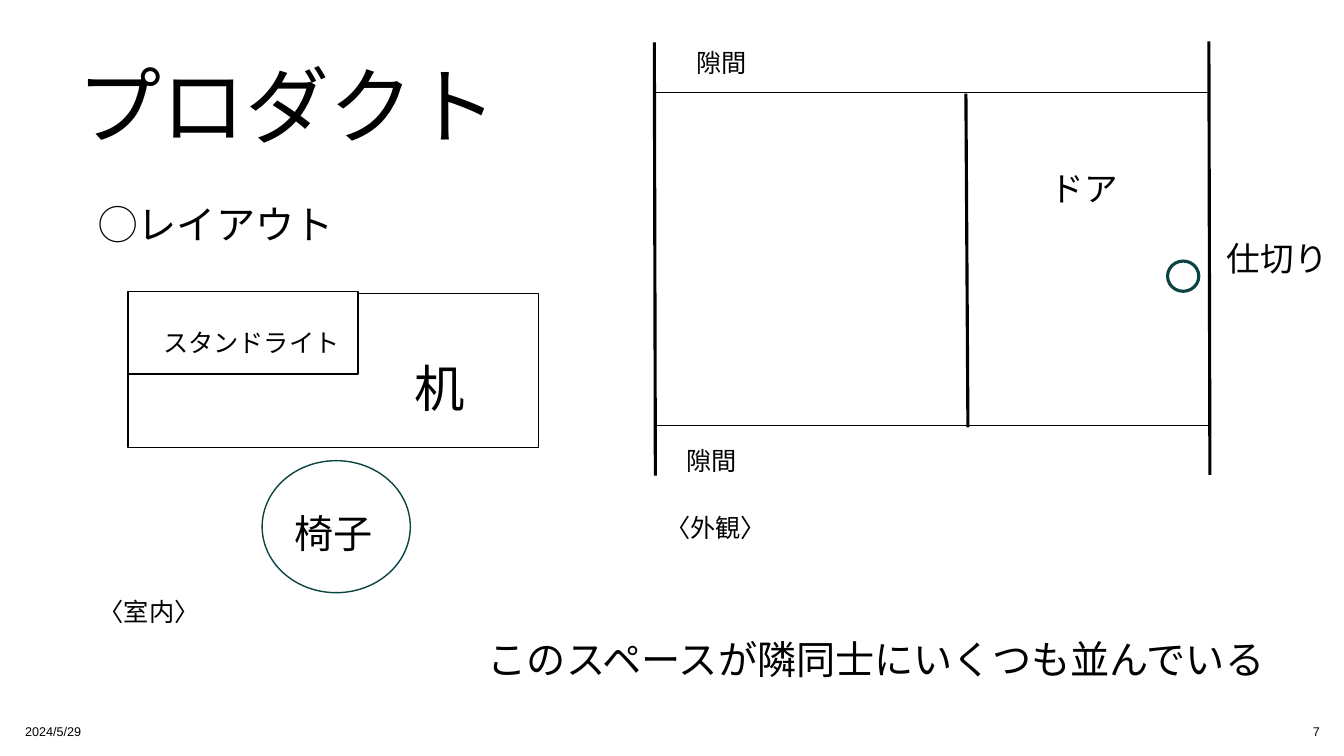
from dataclasses import dataclass

from lxml import etree
from pptx import Presentation
from pptx import util as u
from pptx.dml.color import RGBColor
from pptx.enum import shapes, text
from pptx.oxml.ns import qn


@dataclass(frozen=True)
class Theme:
    ink: RGBColor = RGBColor(0x00, 0x00, 0x00)
    paper: RGBColor = RGBColor(0xFF, 0xFF, 0xFF)
    accent: RGBColor = RGBColor(0x0A, 0x44, 0x43)
    latin: str = "Arial"
    japanese: str = "Noto Sans CJK JP"
    title: int = 60
    desk: int = 36
    heading: int = 28
    fitting: int = 24
    caption: int = 18
    footer: int = 9
    thin: float = 1
    thick: float = 2.25


@dataclass(frozen=True)
class Area:
    """Left, top, width and height in grid columns and rows."""
    col: float
    row: float
    cols: float
    rows: float


@dataclass(frozen=True)
class Label:
    words: str
    area: Area
    size: int
    font: str
    align: text.PP_ALIGN = text.PP_ALIGN.LEFT
    anchor: text.MSO_ANCHOR = text.MSO_ANCHOR.TOP
    spacing: float = 1.0


@dataclass(frozen=True)
class Outline:
    kind: shapes.MSO_SHAPE
    area: Area
    color: RGBColor
    weight: float


@dataclass(frozen=True)
class Wall:
    start: tuple[float, float]
    end: tuple[float, float]


THEME = Theme()
COLUMNS, ROWS = 133.3, 75
RECT, OVAL = shapes.MSO_SHAPE.RECTANGLE, shapes.MSO_SHAPE.OVAL

deck = Presentation()
deck.slide_width, deck.slide_height = u.Inches(13.33), u.Inches(7.5)
slide = deck.slides.add_slide(deck.slide_layouts[6])


def x(cols: float) -> int:
    return round(deck.slide_width * cols / COLUMNS)


def y(rows: float) -> int:
    return round(deck.slide_height * rows / ROWS)


def place(area: Area) -> tuple[int, int, int, int]:
    return x(area.col), y(area.row), x(area.cols), y(area.rows)


def draw_outline(outline: Outline) -> None:
    shape = slide.shapes.add_shape(outline.kind, *place(outline.area))
    shape.shadow.inherit = False
    shape.fill.solid()
    shape.fill.fore_color.rgb = THEME.paper
    shape.line.color.rgb = outline.color
    shape.line.width = u.Pt(outline.weight)


def draw_wall(wall: Wall) -> None:
    line = slide.shapes.add_connector(
        shapes.MSO_CONNECTOR.STRAIGHT,
        x(wall.start[0]), y(wall.start[1]), x(wall.end[0]), y(wall.end[1]))
    line.line.color.rgb = THEME.ink
    line.line.width = u.Pt(THEME.thick)
    etree.SubElement(line._element.spPr, qn("a:effectLst"))


def write_label(label: Label) -> None:
    frame = slide.shapes.add_textbox(*place(label.area)).text_frame
    frame.word_wrap = True
    frame.vertical_anchor = label.anchor
    paragraph = frame.paragraphs[0]
    paragraph.alignment = label.align
    paragraph.line_spacing = label.spacing
    run = paragraph.add_run()
    run.text = label.words
    run.font.size = u.Pt(label.size)
    run.font.color.rgb = THEME.ink
    run.font.name = label.font
    east_asian = etree.SubElement(run._r.get_or_add_rPr(), qn("a:ea"))
    east_asian.set("typeface", THEME.japanese)


# Room plan: desk, chair and stand light; outside view: front panel
plan = [
    Outline(RECT, Area(12.7, 29.1, 40.7, 15.3), THEME.ink, THEME.thin),
    Outline(OVAL, Area(26, 45.7, 14.7, 13.1), THEME.accent, THEME.thin),
    Outline(RECT, Area(12.7, 28.9, 22.8, 8.2), THEME.ink, THEME.thin),
    Outline(RECT, Area(64.9, 9.2, 55, 33), THEME.ink, THEME.thin),
]

# Partitions on both sides and the edge of the door
walls = [
    Wall((119.9, 4.1), (120, 47.1)),
    Wall((64.9, 4.2), (65, 47.2)),
    Wall((95.8, 9.3), (96, 42.4)),
]

door_knob = Outline(OVAL, Area(115.8, 25.9, 3.1, 3), THEME.accent, THEME.thick)

middle = text.MSO_ANCHOR.MIDDLE
labels = [
    # Headings
    Label("プロダクト", Area(6.7, 6, 116.5, 12.4), THEME.title, THEME.japanese, spacing=0.9),
    Label("◯レイアウト", Area(8.8, 18.4, 29.9, 14.6), THEME.heading, THEME.japanese, spacing=1.2),
    # Room plan
    Label("スタンドライト", Area(15.2, 32, 20.3, 4), THEME.caption, THEME.japanese),
    Label("机", Area(40.1, 34.9, 8, 7.2), THEME.desk, THEME.japanese),
    Label("椅子", Area(28.2, 50, 11, 5.7), THEME.heading, THEME.japanese),
    Label("〈室内〉", Area(8.8, 58.7, 17.2, 4), THEME.caption, THEME.latin),
    # Outside view
    Label("ドア", Area(103.2, 16.2, 12.6, 5), THEME.fitting, THEME.japanese),
    Label("仕切り", Area(120.7, 23.1, 12.6, 5), THEME.fitting, THEME.japanese),
    Label("隙間", Area(67.1, 43.7, 30, 4), THEME.caption, THEME.latin),
    Label("隙間", Area(68.1, 4.2, 30, 4), THEME.caption, THEME.latin),
    Label("〈外観〉", Area(65, 50.3, 30, 4), THEME.caption, THEME.latin),
    # Closing remark and footer
    Label("このスペースが隣同士にいくつも並んでいる", Area(47.4, 62.5, 80.4, 5.7),
          THEME.heading, THEME.japanese),
    Label("2024/5/29", Area(1.5, 70.6, 38.2, 4), THEME.footer, THEME.latin, anchor=middle),
    Label("7", Area(127.2, 70.6, 4.7, 4), THEME.footer, THEME.latin,
          align=text.PP_ALIGN.RIGHT, anchor=middle),
]

for outline in plan:
    draw_outline(outline)
for wall in walls:
    draw_wall(wall)
draw_outline(door_knob)
for label in labels:
    write_label(label)

deck.save("out.pptx")
